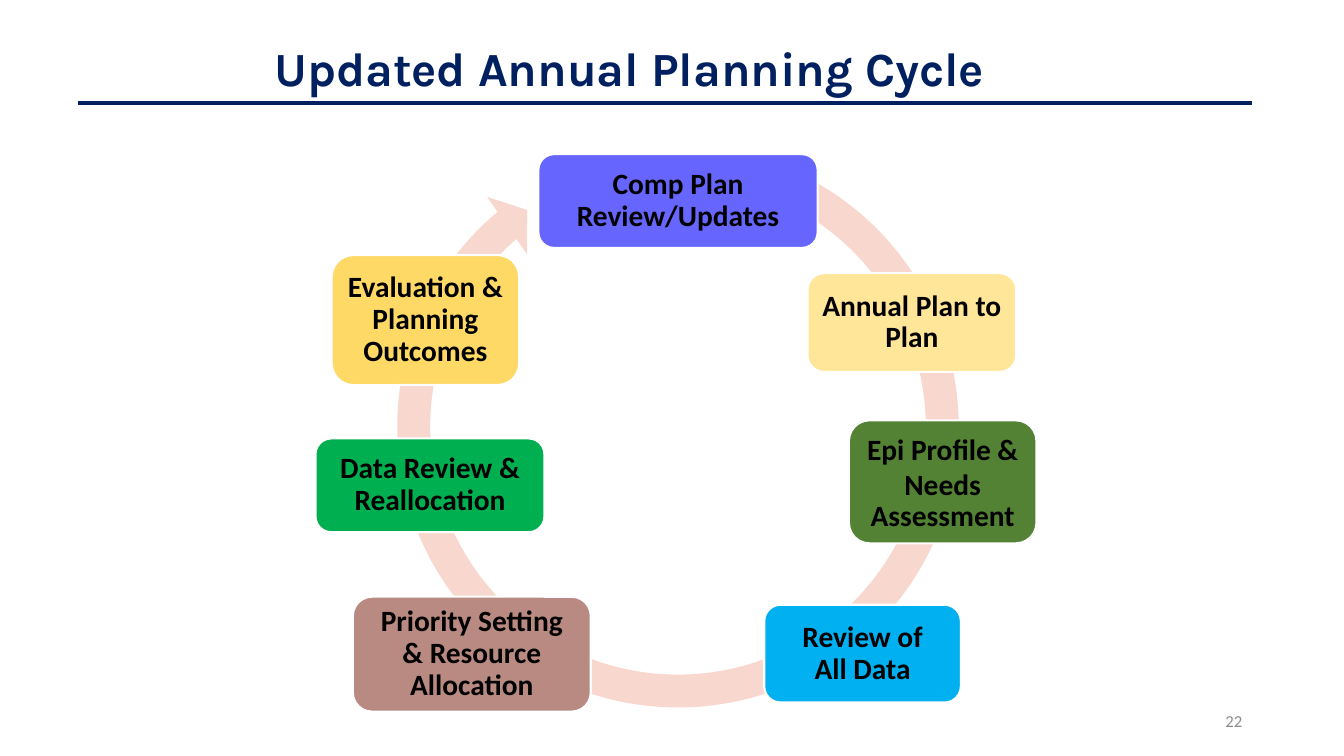
from pptx import Presentation
from pptx.dml.color import RGBColor
from pptx.enum.shapes import MSO_CONNECTOR, MSO_SHAPE
from pptx.enum.text import MSO_ANCHOR, PP_ALIGN
from pptx.oxml.ns import qn
from pptx.util import Pt
from lxml.etree import SubElement

PX = 9144  # EMU per px, 100 px to the inch

NAVY = RGBColor(0x00, 0x20, 0x60)
BLACK = RGBColor(0x00, 0x00, 0x00)
WHITE = RGBColor(0xFF, 0xFF, 0xFF)
GREY = RGBColor(0x8C, 0x8C, 0x8C)
PINK = RGBColor(0xF8, 0xD7, 0xCE)
VIOLET = RGBColor(0x66, 0x66, 0xFF)
CREAM = RGBColor(0xFF, 0xE6, 0x99)
OLIVE = RGBColor(0x54, 0x82, 0x35)
BLUE = RGBColor(0x00, 0xB0, 0xF0)
ROSE = RGBColor(0xB9, 0x8A, 0x82)
GREEN = RGBColor(0x00, 0xB0, 0x50)
YELLOW = RGBColor(0xFF, 0xD9, 0x66)

# Clockwise from the top: paragraphs, box (left, top, width, height), colour
STEPS = [
    (["Comp Plan Review/Updates"], (534, 153, 277, 93), VIOLET),
    (["Annual Plan to Plan"], (801, 271, 207, 98), CREAM),
    (["Epi Profile & Needs", "Assessment"], (842, 417, 186, 122), OLIVE),
    (["Review of", "All Data"], (758, 600, 195, 97), BLUE),
    (["Priority Setting & Resource Allocation"], (350, 592, 236, 114), ROSE),
    (["Data Review & Reallocation"], (313, 435, 227, 93), GREEN),
    (["Evaluation & Planning Outcomes"], (329, 253, 186, 129), YELLOW),
]


def emu(*lengths):
    return [length * PX for length in lengths]


def set_font(paragraph, name, size, color, bold=False):
    font = paragraph.font
    font.name, font.size, font.bold = name, Pt(size), bold
    font.color.rgb = color


def add_title(slide, text, box):
    title = slide.shapes.title
    title.left, title.top, title.width, title.height = emu(*box)
    frame = title.text_frame
    frame.text = text
    frame.vertical_anchor = MSO_ANCHOR.MIDDLE
    paragraph = frame.paragraphs[0]
    paragraph.alignment = PP_ALIGN.LEFT
    paragraph.line_spacing = 0.9
    set_font(paragraph, "Karla", 34, NAVY, bold=True)


def add_filled_shape(slide, kind, box, color):
    shape = slide.shapes.add_shape(kind, *emu(*box))
    shape.shadow.inherit = False
    shape.fill.solid()
    shape.fill.fore_color.rgb = color
    return shape


def add_cycle_arrow(slide, box):
    arrow = add_filled_shape(slide, MSO_SHAPE.CIRCULAR_ARROW, box, PINK)
    arrow.line.fill.background()
    # Band width, head angle, tip angle, start angle, head width
    for index, value in enumerate([0.055, 3.307, 137.807, 173.83, 0.058]):
        arrow.adjustments[index] = value


def add_step(slide, texts, box, color):
    step = add_filled_shape(slide, MSO_SHAPE.ROUNDED_RECTANGLE, box, color)
    step.line.color.rgb = WHITE
    step.line.width = Pt(1.5)
    frame = step.text_frame
    frame.word_wrap = True
    frame.vertical_anchor = MSO_ANCHOR.MIDDLE
    frame.margin_left = frame.margin_right = 9 * PX
    frame.margin_top = frame.margin_bottom = 9 * PX
    frame.text = "\n".join(texts)
    for paragraph in frame.paragraphs:
        paragraph.alignment = PP_ALIGN.CENTER
        paragraph.line_spacing = 0.9
        set_font(paragraph, "Calibri", 21, BLACK, bold=True)
    return step


def add_slide_number(slide, text, box):
    frame = slide.shapes.add_textbox(*emu(*box)).text_frame
    frame.word_wrap = True
    frame.vertical_anchor = MSO_ANCHOR.MIDDLE
    frame.text = text
    paragraph = frame.paragraphs[0]
    paragraph.alignment = PP_ALIGN.RIGHT
    set_font(paragraph, "Calibri", 12, GREY)


def add_rule(slide, left, right, y):
    rule = slide.shapes.add_connector(
        MSO_CONNECTOR.STRAIGHT, *emu(left, y, right, y))
    rule.line.color.rgb = NAVY
    rule.line.width = Pt(2.5)
    SubElement(rule.element.spPr, qn("a:effectLst"))


def main():
    presentation = Presentation()
    presentation.slide_width, presentation.slide_height = emu(1333, 750)
    slide = presentation.slides.add_slide(presentation.slide_layouts[5])
    add_title(slide, "Updated Annual Planning Cycle", (262, 25, 800, 92))
    add_cycle_arrow(slide, (376, 127, 593, 593))
    steps = [add_step(slide, *step) for step in STEPS]
    # The first line of the profile step is set at full line spacing
    steps[2].text_frame.paragraphs[0].line_spacing = 1.0
    add_slide_number(slide, "22", (942, 695, 300, 40))
    add_rule(slide, 77, 1242, 102)
    presentation.save("out.pptx")


if __name__ == "__main__":
    main()
